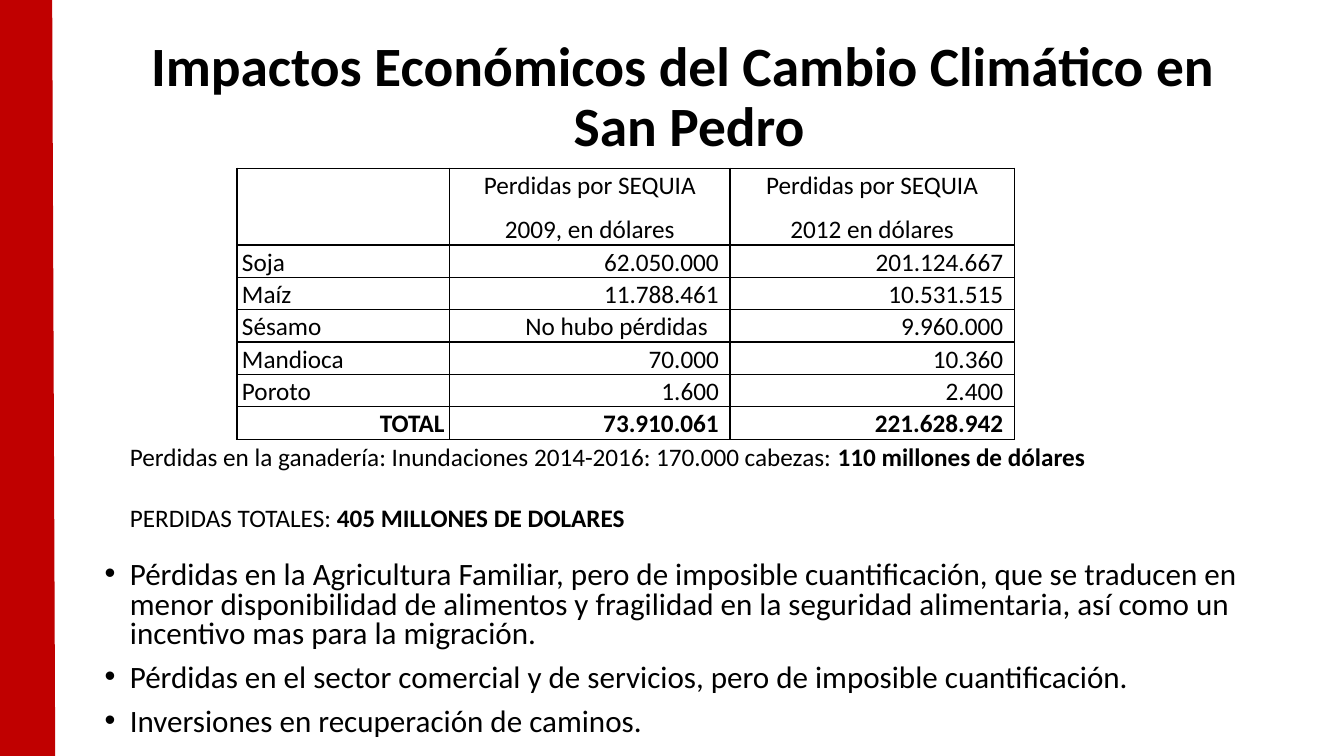
from lxml.etree import SubElement
from pptx import Presentation
from pptx.dml.color import RGBColor
from pptx.enum.shapes import MSO_CONNECTOR
from pptx.enum.text import MSO_ANCHOR, PP_ALIGN
from pptx.oxml.ns import qn
from pptx.util import Inches, Pt

FONT = "Calibri"
BLACK = RGBColor(0, 0, 0)
RED = RGBColor(0xC0, 0, 0)

TITLE_LINES = ["Impactos Económicos del Cambio Climático en ", "San Pedro"]
HEADERS = [
    [],
    ["Perdidas por SEQUIA", "2009, en dólares"],
    ["Perdidas por SEQUIA", "2012 en dólares"],
]
NO_LOSS = "No hubo pérdidas"
LOSSES = [
    ("Soja", "62.050.000", "201.124.667"),
    ("Maíz", "11.788.461", "10.531.515"),
    ("Sésamo", NO_LOSS, "9.960.000"),
    ("Mandioca", "70.000", "10.360"),
    ("Poroto", "1.600", "2.400"),
    ("TOTAL", "73.910.061", "221.628.942"),
]
NOTES = [
    ("Perdidas en la ganadería: Inundaciones 2014-2016: 170.000 cabezas: ",
     "110 millones de dólares"),
    ("PERDIDAS TOTALES: ", "405 MILLONES DE DOLARES"),
]
BULLETS = [
    "Pérdidas en la Agricultura Familiar, pero de imposible cuantificación, "
    "que se traducen en menor disponibilidad de alimentos y fragilidad en la "
    "seguridad alimentaria, así como un incentivo mas para la migración.",
    "Pérdidas en el sector comercial y de servicios, pero de imposible cuantificación.",
    "Inversiones en recuperación de caminos.",
]

COLUMN_WIDTHS = [2.11, 2.78, 2.82]
HEADER_HEIGHT, ROW_HEIGHT = 0.76, 0.32


def add_run(paragraph, text, size=18, bold=False):
    run = paragraph.add_run()
    run.text = text
    font = run.font
    font.name, font.size, font.bold = FONT, Pt(size), bold
    font.color.rgb = BLACK


def add_paragraph(frame, runs, size=18, align=PP_ALIGN.LEFT, line=1.0, before=0, after=0):
    """Fill the first paragraph if it is empty, else append one; runs are (text, bold)."""
    paragraph = frame.paragraphs[0]
    if paragraph.runs:
        paragraph = frame.add_paragraph()
    paragraph.alignment = align
    paragraph.line_spacing = line
    paragraph.space_before, paragraph.space_after = Pt(before), Pt(after)
    for text, bold in runs:
        add_run(paragraph, text, size, bold)
    return paragraph


def add_text_box(slide, left, top, width, height):
    frame = slide.shapes.add_textbox(*map(Inches, (left, top, width, height))).text_frame
    frame.word_wrap = True
    return frame


def add_bullet(paragraph):
    properties = paragraph._p.get_or_add_pPr()
    properties.set("marL", str(Inches(0.25)))
    properties.set("indent", str(-Inches(0.25)))
    SubElement(properties, qn("a:buFont"), typeface="Arial")
    SubElement(properties, qn("a:buChar"), char="•")


def add_borders(cell):
    properties = cell._tc.get_or_add_tcPr()
    for position, side in enumerate(("a:lnL", "a:lnR", "a:lnT", "a:lnB")):
        border = properties.makeelement(qn(side), {"w": str(Pt(1))})
        properties.insert(position, border)
        fill = SubElement(border, qn("a:solidFill"))
        SubElement(fill, qn("a:srgbClr"), val=str(BLACK))


def fill_cell(cell, lines, align, bold=False, right_margin=0.05):
    cell.fill.background()
    cell.vertical_anchor = MSO_ANCHOR.BOTTOM
    cell.margin_left, cell.margin_right = Inches(0.05), Inches(right_margin)
    cell.margin_top = cell.margin_bottom = 0
    for text in lines or [""]:
        add_paragraph(cell.text_frame, [(text, bold)], align=align, line=1.07, after=8)
    add_borders(cell)


def add_loss_table(slide):
    height = HEADER_HEIGHT + ROW_HEIGHT * len(LOSSES)
    table = slide.shapes.add_table(
        len(LOSSES) + 1, len(HEADERS),
        Inches(2.35), Inches(1.67), Inches(sum(COLUMN_WIDTHS)), Inches(height)).table
    table.first_row = table.horz_banding = False
    for column, width in zip(table.columns, COLUMN_WIDTHS):
        column.width = Inches(width)
    for index, row in enumerate(table.rows):
        row.height = Inches(ROW_HEIGHT if index else HEADER_HEIGHT)
    for index, lines in enumerate(HEADERS):
        fill_cell(table.cell(0, index), lines, PP_ALIGN.CENTER)
    for row_index, values in enumerate(LOSSES, start=1):
        total = values[0] == "TOTAL"
        for index, value in enumerate(values):
            align = PP_ALIGN.RIGHT if index or total else PP_ALIGN.LEFT
            margin = 0.22 if value == NO_LOSS else 0.11 if index else 0.05
            fill_cell(table.cell(row_index, index), [value], align, total, margin)


def add_side_bar(slide):
    bar = slide.shapes.add_connector(
        MSO_CONNECTOR.STRAIGHT, Inches(0.24), 0, Inches(0.27), Inches(7.5))
    bar.line.color.rgb = RED
    bar.line.width = Pt(40)
    SubElement(bar._element.spPr, qn("a:effectLst"))


def set_title(title):
    title.left, title.top, title.width, title.height = map(Inches, (1.22, 0.19, 11.23, 1.58))
    frame = title.text_frame
    frame.word_wrap = True
    frame.vertical_anchor = MSO_ANCHOR.MIDDLE
    first, second = TITLE_LINES
    paragraph = add_paragraph(frame, [(first, True)], size=39.6,
                              align=PP_ALIGN.CENTER, line=0.9)
    paragraph.add_line_break()
    add_run(paragraph, second, 39.6, True)


def main():
    presentation = Presentation()
    presentation.slide_width, presentation.slide_height = Inches(13.33), Inches(7.5)
    slide = presentation.slides.add_slide(presentation.slide_layouts.get_by_name("Title Only"))

    bullet_frame = add_text_box(slide, 0.94, 5.52, 11.5, 1.89)
    for text in BULLETS:
        add_bullet(add_paragraph(bullet_frame, [(text, False)], size=22.2, line=0.8, before=10))

    note_frame = add_text_box(slide, 1.19, 4.33, 11.01, 1.01)
    for index, (label, amount) in enumerate(NOTES):
        add_paragraph(note_frame, [(label, False), (amount, True)], before=22 * index)

    add_loss_table(slide)
    add_side_bar(slide)
    set_title(slide.shapes.title)
    presentation.save("out.pptx")


if __name__ == "__main__":
    main()
